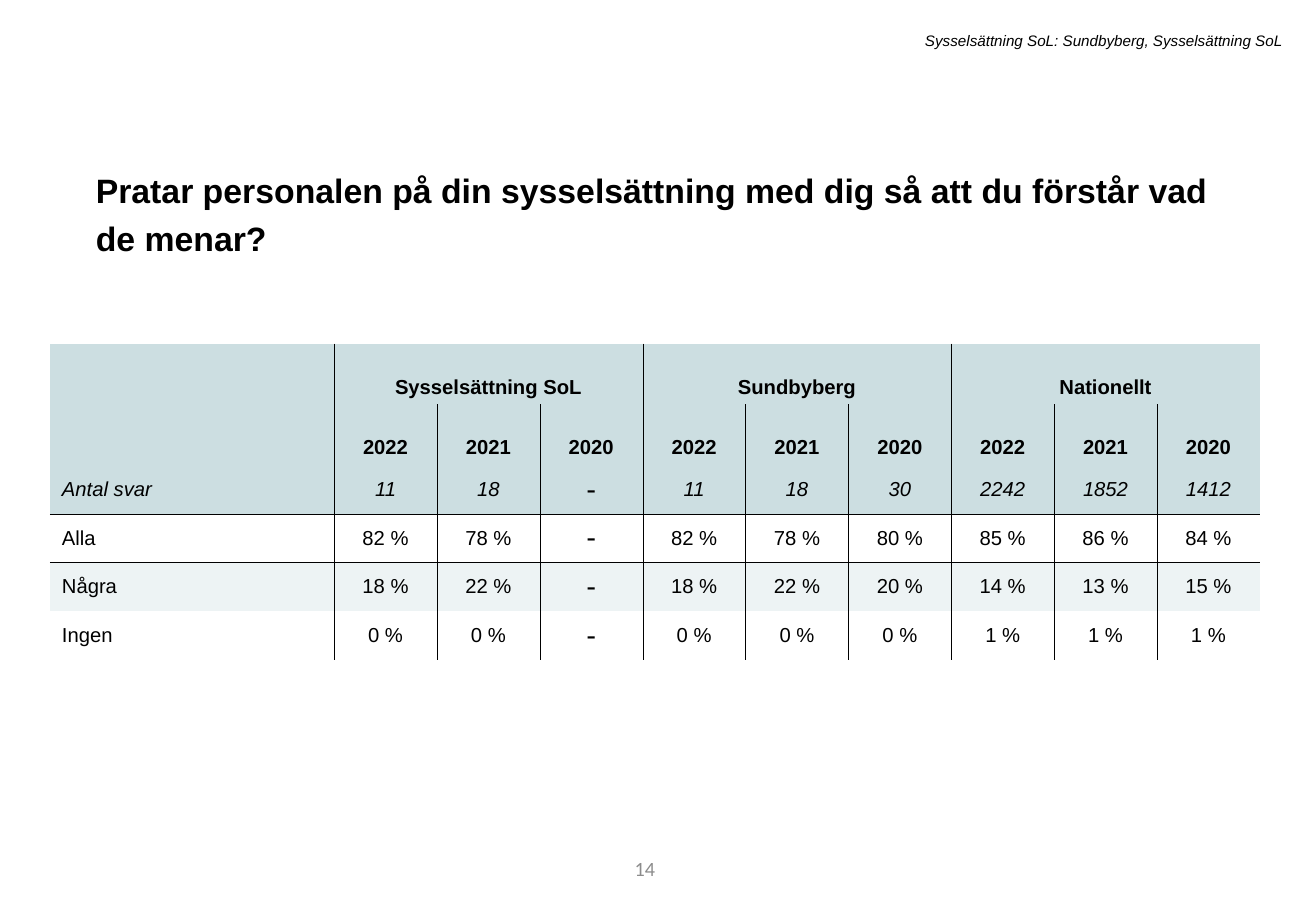
from dataclasses import dataclass

from lxml import etree
from pptx import Presentation
from pptx.dml.color import RGBColor
from pptx.enum.text import MSO_ANCHOR, PP_ALIGN
from pptx.oxml.ns import qn
from pptx.util import Inches, Pt

LEFT, CENTER, RIGHT = PP_ALIGN.LEFT, PP_ALIGN.CENTER, PP_ALIGN.RIGHT
TOP, MIDDLE, BOTTOM = MSO_ANCHOR.TOP, MSO_ANCHOR.MIDDLE, MSO_ANCHOR.BOTTOM


@dataclass(frozen=True)
class Theme:
    font: str = "Arial"
    number_font: str = "Calibri"
    ink: str = "000000"
    muted: str = "8C8C8C"
    header_fill: str = "CCDEE1"
    band_fill: str = "EDF3F4"
    title_size: int = 20
    body_size: int = 12
    dash_size: int = 18
    small_size: int = 9
    line_width: float = 0.25


THEME = Theme()
NO_TABLE_STYLE = "{2D5ABB26-0587-4C30-8999-92F81FD0307C}"
GROUPS = ["Sysselsättning SoL", "Sundbyberg", "Nationellt"]
YEARS = ["2022", "2021", "2020"]
COUNTS = ["Antal svar", "11", "18", "-", "11", "18", "30", "2242", "1852", "1412"]
SHARES = {
    "Alla": [82, 78, None, 82, 78, 80, 85, 86, 84],
    "Några": [18, 22, None, 18, 22, 20, 14, 13, 15],
    "Ingen": [0, 0, None, 0, 0, 0, 1, 1, 1],
}
HEADER_ROWS = 3
ROW_HEIGHTS = [0.5, 0.5, 0.4, 0.4, 0.4, 0.4]
LABEL_WIDTH = 2.34


def write_text(frame, text, size=THEME.body_size, font=THEME.font, color=THEME.ink,
               bold=False, italic=False, align=LEFT, line_spacing=None, space_before=None):
    para = frame.paragraphs[0]
    para.alignment = align
    para.line_spacing = line_spacing
    if space_before is not None:
        para.space_before = Pt(space_before)
    span = para.add_run()
    span.text = text
    span.font.size = Pt(size)
    span.font.name = font
    span.font.bold = bold
    span.font.italic = italic
    span.font.color.rgb = RGBColor.from_string(color)


def add_text(page, box, text, anchor=TOP, **style):
    frame = page.shapes.add_textbox(*map(Inches, box)).text_frame
    frame.word_wrap = True
    frame.vertical_anchor = anchor
    write_text(frame, text, **style)


def add_borders(cell, sides):
    properties = cell._tc.get_or_add_tcPr()
    for index, side in enumerate(side for side in "LRTB" if side in sides):
        line = etree.Element(qn(f"a:ln{side}"), w=str(Pt(THEME.line_width)))
        fill = etree.SubElement(line, qn("a:solidFill"))
        etree.SubElement(fill, qn("a:srgbClr"), val=THEME.ink)
        properties.insert(index, line)


def border_sides(row, column, last_column):
    step = len(YEARS) if row == 0 else 1
    sides = ""
    if column > 0 and (column - 1) % step == 0:
        sides += "L"
    if column < last_column and column % step == 0:
        sides += "R"
    if row == HEADER_ROWS:
        sides += "T"
    if row == HEADER_ROWS - 1:
        sides += "B"
    return sides


def table_rows():
    group_row = [""]
    for group in GROUPS:
        group_row += [group] + [""] * (len(YEARS) - 1)
    share_rows = [
        [label] + ["-" if share is None else f"{share} %" for share in shares]
        for label, shares in SHARES.items()
    ]
    return [group_row, [""] + YEARS * len(GROUPS), COUNTS] + share_rows


def format_cell(cell, text, row, column, last_column):
    if row < HEADER_ROWS or row == HEADER_ROWS + 1:
        cell.fill.solid()
        fill = THEME.header_fill if row < HEADER_ROWS else THEME.band_fill
        cell.fill.fore_color.rgb = RGBColor.from_string(fill)
    else:
        cell.fill.background()
    add_borders(cell, border_sides(row, column, last_column))
    cell.vertical_anchor = BOTTOM if row < 2 else MIDDLE
    align = CENTER if column else LEFT
    if text == "-":
        write_text(cell.text_frame, text, size=THEME.dash_size,
                   font=THEME.number_font, align=align)
    elif text:
        write_text(cell.text_frame, text, bold=row < 2, italic=row == 2, align=align)


def add_result_table(page, box):
    rows = table_rows()
    last_column = len(rows[0]) - 1
    frame = page.shapes.add_table(len(rows), last_column + 1, *map(Inches, box))
    table = frame.table
    table.first_row = table.horz_banding = False
    table._tbl.tblPr.find(qn("a:tableStyleId")).text = NO_TABLE_STYLE
    for index, column in enumerate(table.columns):
        value_width = (box[2] - LABEL_WIDTH) / last_column
        column.width = Inches(value_width if index else LABEL_WIDTH)
    for row, height in zip(table.rows, ROW_HEIGHTS):
        row.height = Inches(height)
    for start in range(1, last_column, len(YEARS)):
        table.cell(0, start).merge(table.cell(0, start + len(YEARS) - 1))
    for row, texts in enumerate(rows):
        for column, text in enumerate(texts):
            format_cell(table.cell(row, column), text, row, column, last_column)


def build_result_page(page):
    add_text(page, (3.05, 6.95, 2.44, 0.4), "14", anchor=MIDDLE, align=RIGHT,
             font=THEME.number_font, color=THEME.muted)
    add_text(page, (0.69, 1.28, 9.4, 0.47),
             "Pratar personalen på din sysselsättning med dig så att du förstår vad de menar?",
             size=THEME.title_size, bold=True, line_spacing=1.2, space_before=10)
    add_text(page, (1.79, 0.21, 8.86, 0.25),
             "Sysselsättning SoL: Sundbyberg, Sysselsättning SoL",
             size=THEME.small_size, italic=True, align=RIGHT)
    add_result_table(page, (0.41, 2.83, 9.96, sum(ROW_HEIGHTS)))


def main():
    deck = Presentation()
    deck.slide_width, deck.slide_height = Inches(10.83), Inches(7.5)
    build_result_page(deck.slides.add_slide(deck.slide_layouts[6]))
    deck.save("out.pptx")


if __name__ == "__main__":
    main()
